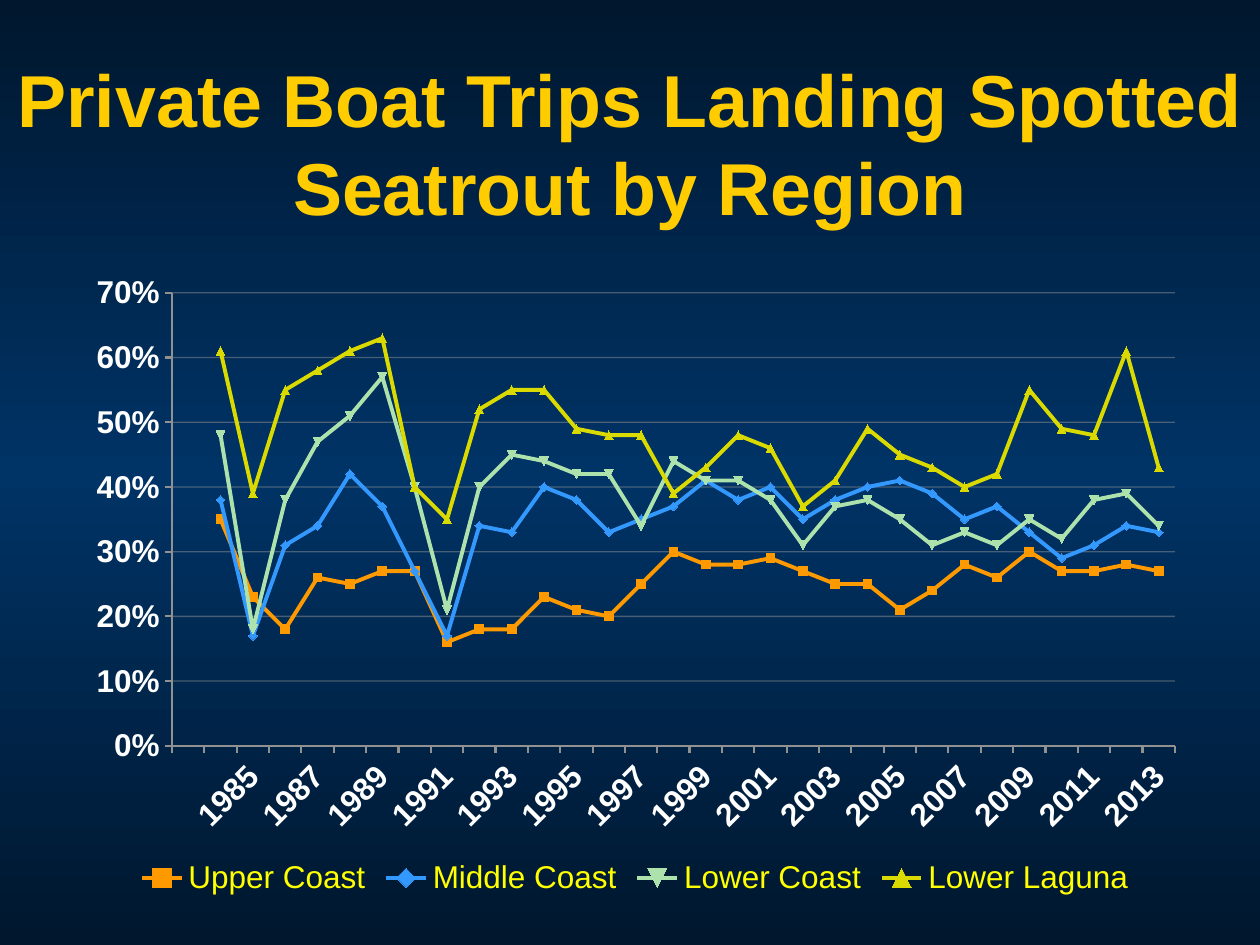
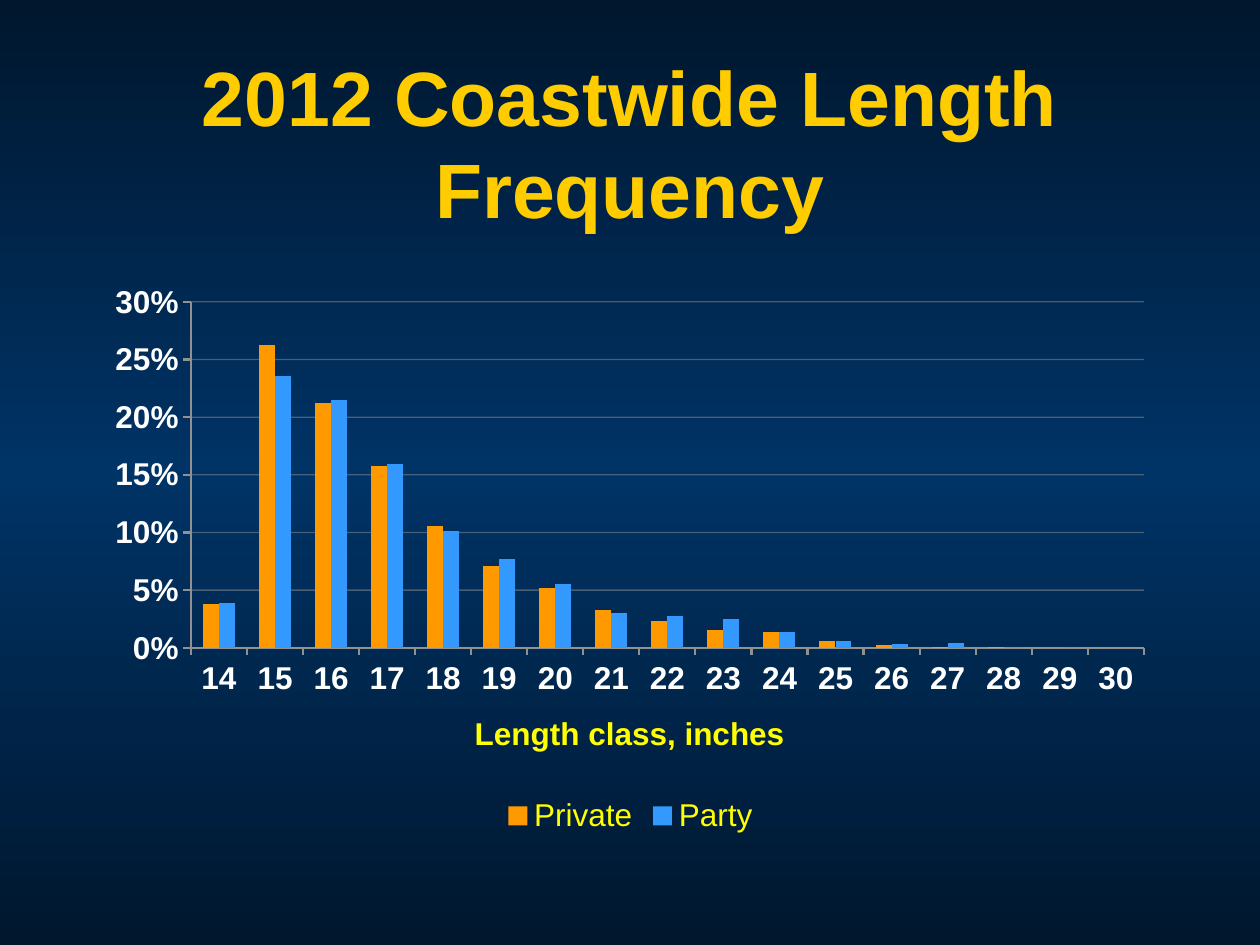
from copy import deepcopy

from lxml import etree
from pptx import Presentation
from pptx import util as u
from pptx.chart.data import CategoryChartData
from pptx.dml.color import RGBColor
from pptx.enum import chart as kinds
from pptx.enum import text
from pptx.oxml.ns import qn

PX = u.Inches(1) // 126
FONT = "Arial"
EDGE_NAVY = RGBColor(0x00, 0x17, 0x2E)
NAVY = RGBColor(0x00, 0x33, 0x66)
GOLD = RGBColor(0xFF, 0xCC, 0x00)
YELLOW = RGBColor(0xFF, 0xFF, 0x00)
WHITE = RGBColor(0xFF, 0xFF, 0xFF)
GREY = RGBColor(0x91, 0x91, 0x91)
ORANGE = RGBColor(0xFF, 0x99, 0x00)
BLUE = RGBColor(0x33, 0x99, 0xFF)
MINT = RGBColor(0xAD, 0xE2, 0xAD)
OLIVE = RGBColor(0xDA, 0xDA, 0x00)

YEARS = ["", *map(str, range(1984, 2014))]
REGIONS = [
    ("Upper Coast", ORANGE, [
        None, .35, .23, .18, .26, .25, .27, .27, .16, .18, .18, .23, .21, .20, .25, .30,
        .28, .28, .29, .27, .25, .25, .21, .24, .28, .26, .30, .27, .27, .28, .27]),
    ("Middle Coast", BLUE, [
        None, .38, .17, .31, .34, .42, .37, .27, .17, .34, .33, .40, .38, .33, .35, .37,
        .41, .38, .40, .35, .38, .40, .41, .39, .35, .37, .33, .29, .31, .34, .33]),
    ("Lower Coast", MINT, [
        None, .48, .18, .38, .47, .51, .57, .40, .21, .40, .45, .44, .42, .42, .34, .44,
        .41, .41, .38, .31, .37, .38, .35, .31, .33, .31, .35, .32, .38, .39, .34]),
    ("Lower Laguna", OLIVE, [
        None, .61, .39, .55, .58, .61, .63, .40, .35, .52, .55, .55, .49, .48, .48, .39,
        .43, .48, .46, .37, .41, .49, .45, .43, .40, .42, .55, .49, .48, .61, .43]),
]
LENGTHS = [str(inches) for inches in range(14, 31)]
BOATS = [
    ("Private", ORANGE, [.038, .263, .212, .158, .106, .071, .052, .033, .023,
                         .015, .014, .006, .002, .001, .001, 0, 0]),
    ("Party", BLUE, [.039, .236, .215, .159, .101, .077, .055, .030, .028,
                     .025, .014, .006, .003, .004, 0, 0, None]),
]


def paint_background(master):
    """Give the master a vertical gradient that is lightest halfway down."""
    fill = master.background.fill
    fill.gradient()
    fill.gradient_angle = 90
    first = next(master.element.iter(qn("a:gs")))
    first.addnext(deepcopy(first))
    for stop, place, color in zip(fill.gradient_stops, (0, .5, 1), (EDGE_NAVY, NAVY, EDGE_NAVY)):
        stop.position = place
        stop.color.rgb = color


def style_font(font, size, color, bold):
    """Set the typeface, size, colour and weight of a font."""
    font.name = FONT
    font.size = u.Pt(size)
    font.color.rgb = color
    font.bold = bold


def add_titled_page(deck, title, size):
    """Add a title-only slide and format its title."""
    page = deck.slides.add_slide(deck.slide_layouts.get_by_name("Title Only"))
    box = page.shapes.title
    box.left, box.top, box.width, box.height = (n * PX for n in (0, 63, 1260, 158))
    frame = box.text_frame
    frame.auto_size = text.MSO_AUTO_SIZE.NONE
    frame.word_wrap = True
    frame.vertical_anchor = text.MSO_ANCHOR.MIDDLE
    para = frame.paragraphs[0]
    para.alignment = text.PP_ALIGN.CENTER
    span = para.add_run()
    span.text = title
    style_font(span.font, size, GOLD, True)
    return page


def style_line(line, width):
    """Draw a grey line of the given width in points."""
    line.color.rgb = GREY
    line.width = u.Pt(width)


def style_axes(chart, top, step):
    """Format both axes and scale the value axis from zero to top."""
    for axis in (chart.category_axis, chart.value_axis):
        style_font(axis.tick_labels.font, 18, WHITE, True)
        style_line(axis.format.line, 1.25)
        axis.major_tick_mark = kinds.XL_TICK_MARK.OUTSIDE
    values = chart.value_axis
    values.minimum_scale, values.maximum_scale, values.major_unit = 0, top, step
    values.tick_labels.number_format = "0%"
    values.tick_labels.number_format_is_linked = False
    values.has_major_gridlines = True
    grid = values.major_gridlines
    style_line(grid.format.line, .75)
    color = next(values._element.find(qn("c:majorGridlines")).iter(qn("a:srgbClr")))
    etree.SubElement(color, qn("a:alpha"), val="50000")


def place_plot(chart, frame, plot):
    """Fix the inner plot area at px positions on the slide."""
    area = chart._chartSpace.chart.plotArea
    for old in area.findall(qn("c:layout")):
        area.remove(old)
    layout = etree.Element(qn("c:layout"))
    area.insert(0, layout)
    manual = etree.SubElement(layout, qn("c:manualLayout"))
    left, top, width, height = frame
    shares = {"x": (plot[0] - left) / width, "y": (plot[1] - top) / height,
              "w": plot[2] / width, "h": plot[3] / height}
    settings = {"layoutTarget": "inner", "xMode": "edge", "yMode": "edge"}
    settings.update((key, f"{share:.4f}") for key, share in shares.items())
    for key, value in settings.items():
        etree.SubElement(manual, qn(f"c:{key}"), val=value)


def add_percent_chart(page, kind, frame, plot, categories, groups, top, step):
    """Add a chart of percentages with a legend below it."""
    data = CategoryChartData(number_format="0%")
    data.categories = categories
    for name, _, values in groups:
        data.add_series(name, values)
    chart = page.shapes.add_chart(kind, *(n * PX for n in frame), data).chart
    style_font(chart.font, 18, YELLOW, False)
    chart.has_title = False
    chart.has_legend = True
    chart.legend.position = kinds.XL_LEGEND_POSITION.BOTTOM
    chart.legend.include_in_layout = False
    chart.plots[0].vary_by_categories = False
    style_axes(chart, top, step)
    place_plot(chart, frame, plot)
    return chart


def color_lines(chart, groups):
    """Colour the lines and their automatic markers."""
    for series, (_, color, _) in zip(chart.plots[0].series, groups):
        series.smooth = False
        series.format.line.color.rgb = color
        series.format.line.width = u.Pt(2.25)
        series.marker.size = 5
        series.marker.format.fill.solid()
        series.marker.format.fill.fore_color.rgb = color
        series.marker.format.line.color.rgb = color


def color_columns(chart, groups):
    """Colour the columns and set the gap between clusters."""
    chart.plots[0].gap_width = 150
    for series, (_, color, _) in zip(chart.plots[0].series, groups):
        series.format.fill.solid()
        series.format.fill.fore_color.rgb = color


def slant_alternate_labels(axis):
    """Slant the category labels and show every second one."""
    axis._element.find(qn("c:txPr")).find(qn("a:bodyPr")).set("rot", "-2700000")
    skip = etree.Element(qn("c:tickLblSkip"), val="2")
    axis._element.find(qn("c:noMultiLvlLbl")).addprevious(skip)


def add_axis_title(axis, title):
    """Write a bold title under an axis."""
    span = axis.axis_title.text_frame.paragraphs[0].add_run()
    span.text = title
    style_font(span.font, 18, YELLOW, True)


def main():
    """Build the two slides and save the deck."""
    deck = Presentation()
    deck.slide_width, deck.slide_height = 1260 * PX, 945 * PX
    paint_background(deck.slide_master)

    page = add_titled_page(deck, "Private Boat Trips Landing Spotted Seatrout by Region", 42)
    trips = add_percent_chart(page, kinds.XL_CHART_TYPE.LINE_MARKERS, (73, 262, 1124, 640),
                              (172, 293, 1003, 453), YEARS, REGIONS, .7, .1)
    color_lines(trips, REGIONS)
    slant_alternate_labels(trips.category_axis)

    page = add_titled_page(deck, "2012 Coastwide Length Frequency", 44)
    sizes = add_percent_chart(page, kinds.XL_CHART_TYPE.COLUMN_CLUSTERED, (95, 273, 1071, 567),
                              (191, 302, 953, 346), LENGTHS, BOATS, .3, .05)
    color_columns(sizes, BOATS)
    add_axis_title(sizes.category_axis, "Length class, inches")

    deck.save("out.pptx")


if __name__ == "__main__":
    main()
